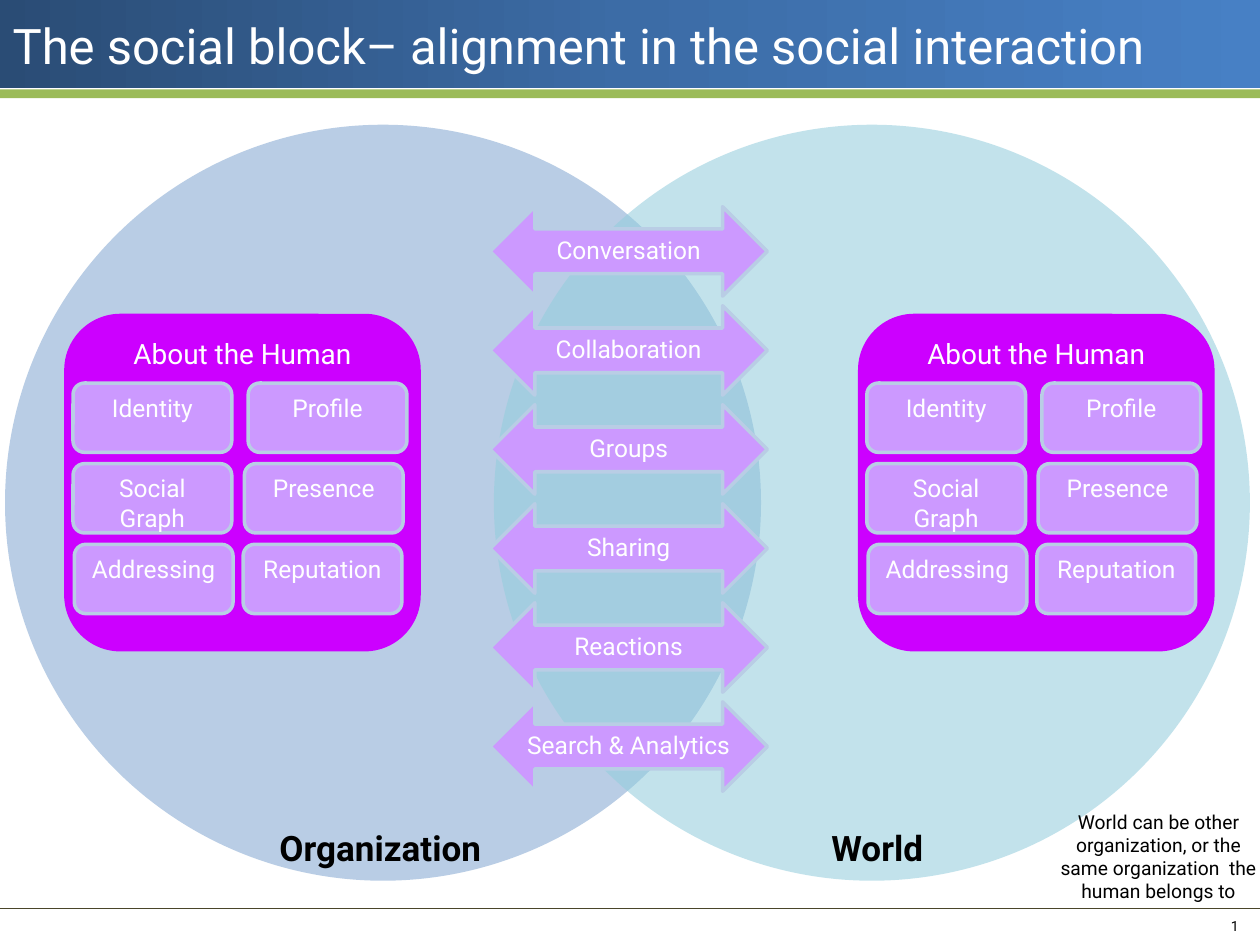
from copy import deepcopy

from lxml import etree
from pptx import Presentation
from pptx.dml.color import RGBColor
from pptx.enum.shapes import MSO_CONNECTOR, MSO_SHAPE
from pptx.enum.text import MSO_ANCHOR, PP_ALIGN
from pptx.oxml.ns import qn
from pptx.util import Inches, Pt

WHITE, BLACK = "FFFFFF", "000000"
MAGENTA, LILAC, PALE_BLUE = "CC00FF", "CC99FF", "B9CDE5"


def color(hex_code):
    return RGBColor.from_string(hex_code)


def write(shape, text, size=14, ink=WHITE, bold=False, align=PP_ALIGN.CENTER,
          anchor=MSO_ANCHOR.TOP, wrap=True):
    frame = shape.text_frame
    frame.word_wrap = wrap
    frame.vertical_anchor = anchor
    para = frame.paragraphs[0]
    para.alignment = align
    span = para.add_run()
    span.text = text
    span.font.name = "Roboto"
    span.font.size = Pt(size)
    span.font.bold = bold
    span.font.color.rgb = color(ink)


deck = Presentation()
deck.slide_width, deck.slide_height = Inches(10), Inches(7.5)
page = deck.slides.add_slide(deck.slide_layouts[5])
shapes = page.shapes


def add_block(kind, left, top, width, height, fill, line=None):
    shape = shapes.add_shape(kind, Inches(left), Inches(top), Inches(width), Inches(height))
    shape.shadow.inherit = False
    shape.fill.solid()
    shape.fill.fore_color.rgb = color(fill)
    if line:
        shape.line.color.rgb = color(line)
        shape.line.width = Pt(2)
    else:
        shape.line.fill.background()
    return shape


# Header band with a three-stop gradient, and the green stripe below it
band = add_block(MSO_SHAPE.RECTANGLE, 0, 0, 10, 0.7, "3C6CA6")
band.fill.gradient()
band.fill.gradient_angle = 0
stop_list = band._element.spPr.find(".//" + qn("a:gsLst"))
stop_list.insert(1, deepcopy(stop_list[0]))
for stop, position, shade in zip(band.fill.gradient_stops, (0, 0.5, 1),
                                 ("2A4C75", "3C6CA6", "4780C5")):
    stop.position = position
    stop.color.rgb = color(shade)
add_block(MSO_SHAPE.RECTANGLE, 0, 0.71, 10, 0.07, "9BBB59")

# Footer rule and page number
rule = shapes.add_connector(MSO_CONNECTOR.STRAIGHT, 0, Inches(7.21), Inches(10), Inches(7.21))
rule.line.color.rgb = color("4A452A")
rule.line.width = Pt(0.75)
etree.SubElement(rule._element.spPr, qn("a:effectLst"))
number = shapes.add_textbox(Inches(8.76), Inches(7.24), Inches(1.17), Inches(0.22))
write(number, "1", size=8, ink=BLACK, align=PP_ALIGN.RIGHT, anchor=MSO_ANCHOR.MIDDLE)

# Title, brought in front of the band
title = shapes.title
title.left, title.top, title.width, title.height = 0, Inches(0.08), Inches(10), Inches(0.55)
write(title, "The social block– alignment in the social interaction", size=28,
      align=PP_ALIGN.LEFT, anchor=MSO_ANCHOR.MIDDLE)
shapes._spTree.append(title._element)

# Overlapping circles, the second one translucent
add_block(MSO_SHAPE.OVAL, 0.04, 0.99, 6, 6, PALE_BLUE)
world = add_block(MSO_SHAPE.OVAL, 3.92, 0.99, 6, 6, "93CDDD")
world_color = world._element.spPr.find(qn("a:solidFill"))[0]
etree.SubElement(world_color, qn("a:alpha"), val="56000")

# Circle names
for name, left, width in (("Organization", 2.12, 1.8), ("World", 6.5, 0.94)):
    label = shapes.add_textbox(Inches(left), Inches(6.51), Inches(width), Inches(0.44))
    write(label, name, size=20, ink=BLACK, bold=True, align=PP_ALIGN.LEFT, wrap=False)

# One panel of human attributes in each circle: (name, offset from panel) by row
attribute_rows = (
    (("Identity", 0.07), ("Profile", 1.46)),
    (("Social Graph", 0.07), ("Presence", 1.43)),
    (("Addressing", 0.08), ("Reputation", 1.42)),
)
for panel_left in (0.51, 6.81):
    panel = add_block(MSO_SHAPE.ROUNDED_RECTANGLE, panel_left, 2.49, 2.83, 2.68, MAGENTA)
    write(panel, "About the Human", size=16)
    for row, attributes in enumerate(attribute_rows):
        for name, offset in attributes:
            box = add_block(MSO_SHAPE.ROUNDED_RECTANGLE, panel_left + offset,
                            3.04 + row * 0.64, 1.26, 0.55, LILAC, PALE_BLUE)
            write(box, name)

# Evenly spaced interaction arrows across the overlap
interactions = ("Conversation", "Collaboration", "Groups", "Sharing", "Reactions",
                "Search & Analytics")
arrow_pitch = (5.57 - 1.64) / (len(interactions) - 1)
for index, name in enumerate(interactions):
    arrow = add_block(MSO_SHAPE.LEFT_RIGHT_ARROW, 3.89, 1.64 + index * arrow_pitch,
                      2.2, 0.71, LILAC, PALE_BLUE)
    write(arrow, name)

# Note on the meaning of "World"
note = shapes.add_textbox(Inches(8.25), Inches(6.38), Inches(1.89), Inches(0.84))
write(note, "World can be other organization, or the same organization  the human belongs to",
      size=11, ink=BLACK)

deck.save("out.pptx")
